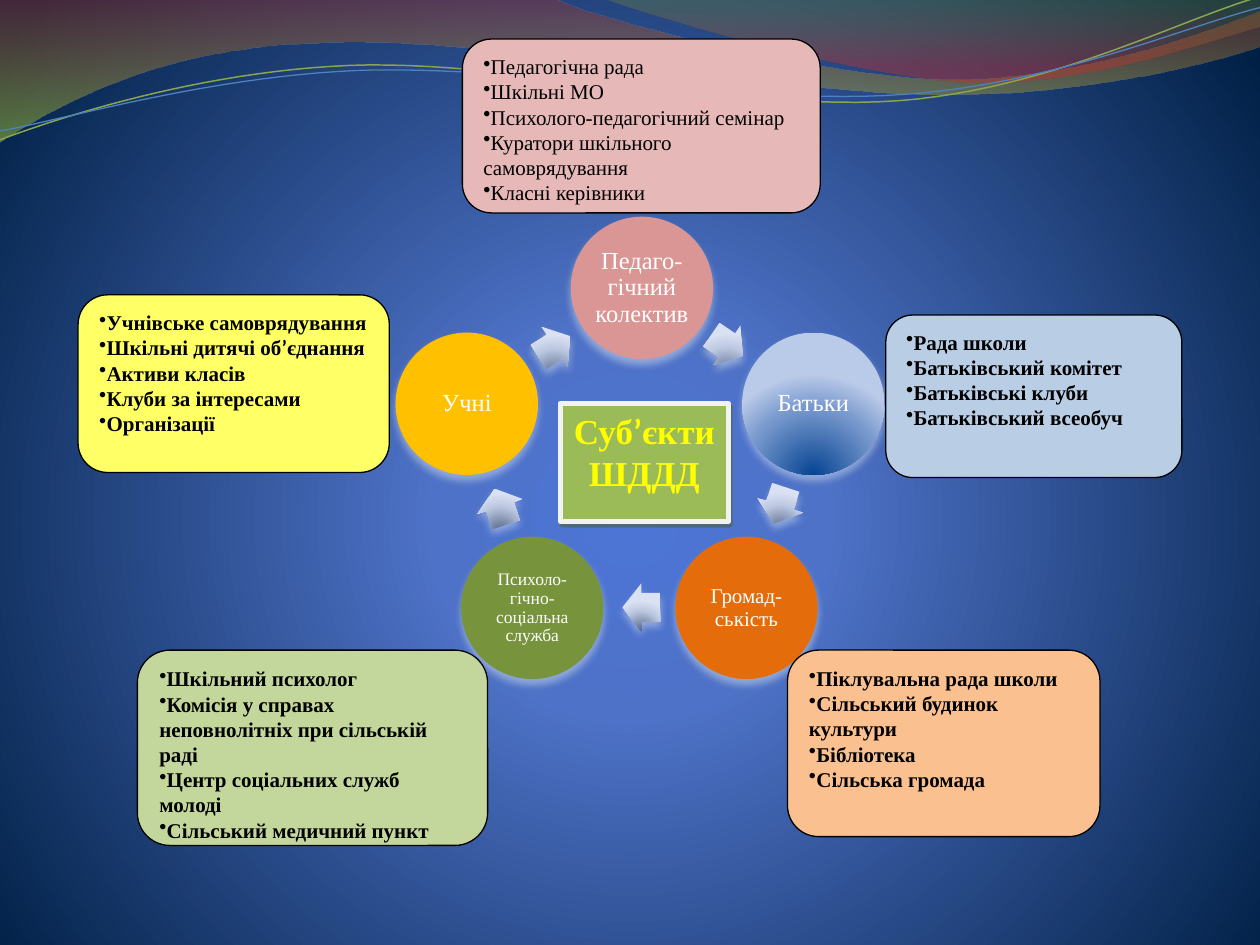
from pptx import Presentation
from pptx.dml.color import RGBColor
from pptx.enum.shapes import MSO_SHAPE
from pptx.enum.text import MSO_ANCHOR, PP_ALIGN
from pptx.oxml import parse_xml
from pptx.oxml.ns import nsdecls, qn
from pptx.util import Inches, Pt

FONT = "Times New Roman"
CIRCLE_SIZE = 1.13
ARROW_SIZE = (0.3, 0.38)

# Gradients: stops (position, colour, opacity), then angle or focus rectangle
BACKGROUND = ([(0, "4D75D6", 100), (25, "4E72C7", 100), (100, "001F44", 100)], (10, 110, 10, 100))
ARROW_FILL = ([(0, "536688", 100), (68, "BECAE3", 100), (100, "D9E1F2", 100)], (50, 130, 50, -30))
PARENTS_FILL = ([(0, "064493", 100), (68, "799ACE", 100), (100, "BACAE9", 100)], (50, 130, 50, -30))
SOFT_SHADOW = ("DCE6F2", 48, 4.5, 3, 90)
PANEL_SHADOW = ("4E6128", 50, 0, 2.2, 63)

# Waves: first point, then lines (one point) or curves (three points)
BANDS = [
    (([(0, "973330", 45), (100, "95C238", 55)], 90), (0, 0), [
        [(4.4, -0.01)],
        [(4.76, 0.17), (6.64, 0.63), (7.58, 0.63)],
        [(8.53, 0.63), (9.58, 0.26), (10, 0.09)],
        [(10.01, 0.36)],
        [(9.83, 0.44), (8.7, 0.76), (7.46, 0.75)],
        [(6.22, 0.75), (3.82, 0.28), (2.57, 0.34)],
        [(1.29, 0.36), (0.46, 0.83), (-0.01, 1.13)],
    ]),
    (([(0, "769537", 30), (80, "BE3330", 45)], 90), (4.79, -0.01), [
        [(5.09, 0.11), (6.82, 0.62), (7.69, 0.65)],
        [(8.56, 0.69), (9.61, 0.32), (10, 0.21)],
        [(10, 0)],
    ]),
]
STRANDS = [
    ("89A54F", 0.85, (0, 1.11), [
        [(0.48, 0.93), (1.58, 0.57), (2.77, 0.52)],
        [(3.95, 0.47), (5.93, 0.89), (7.13, 0.8)],
        [(8.33, 0.71), (9.38, 0.15), (9.98, -0.02)],
    ]),
    ("4F81BD", 0.75, (0, 1.04), [
        [(0.47, 0.96), (1.64, 0.61), (2.83, 0.56)],
        [(4.03, 0.51), (5.97, 0.84), (7.17, 0.75)],
        [(8.36, 0.67), (9.41, 0.21), (10, 0.06)],
    ]),
]

# Cycle: circle (label, left, top, size, fill) and the arrow after it (kind, left, top, rotation)
RIGHT, LEFT = MSO_SHAPE.RIGHT_ARROW, MSO_SHAPE.LEFT_ARROW
CYCLE = [
    (("Педаго-гічний колектив", 4.53, 1.72, 14, "D99694"), (RIGHT, 5.62, 2.55, 34.3)),
    (("Батьки", 5.89, 2.64, 14, PARENTS_FILL), (LEFT, 6.04, 3.82, 288)),
    (("Громад-ськість", 5.36, 4.26, 12, "E46C0A"), (LEFT, 4.94, 4.63, 0)),
    (("Психоло-гічно-соціальна служба", 3.66, 4.26, 10, "77933C"), (LEFT, 3.82, 3.83, 72)),
    (("Учні", 3.14, 2.64, 14, "FFC000"), (RIGHT, 4.25, 2.56, 326.6)),
]

CENTRE = ["Суб’єкти", "ШДДД"]

# Lists: position, fill, bold, items
LISTS = [
    ((3.67, 0.31, 2.84, 1.38), "E6B9B8", False, [
        "Педагогічна рада", "Шкільні МО", "Психолого-педагогічний семінар",
        "Куратори шкільного самоврядування", "Класні керівники"]),
    ((0.62, 2.34, 2.47, 1.41), "FFFF66", True, [
        "Учнівське самоврядування", "Шкільні дитячі об’єднання", "Активи класів",
        "Клуби за інтересами", "Організації"]),
    ((7.03, 2.5, 2.35, 1.29), "B9CDE5", True, [
        "Рада школи", "Батьківський комітет", "Батьківські клуби", "Батьківський всеобуч"]),
    ((1.09, 5.16, 2.78, 1.55), "C3D69B", True, [
        "Шкільний психолог", "Комісія у справах неповнолітніх при сільській раді",
        "Центр соціальних служб молоді", "Сільський медичний пункт"]),
    ((6.25, 5.16, 2.48, 1.48), "FAC090", True, [
        "Піклувальна рада школи", "Сільський будинок культури", "Бібліотека", "Сільська громада"]),
]


def color(value):
    return RGBColor.from_string(value)


def color_xml(value, opacity):
    return f'<a:srgbClr val="{value}"><a:alpha val="{opacity * 1000}"/></a:srgbClr>'


def set_gradient(fill, parent, gradient):
    stops, direction = gradient
    stop_xml = "".join(f'<a:gs pos="{position * 1000}">{color_xml(value, opacity)}</a:gs>'
                       for position, value, opacity in stops)
    if isinstance(direction, tuple):
        sides = " ".join(f'{side}="{amount * 1000}"' for side, amount in zip("ltrb", direction))
        shade = f'<a:path path="circle"><a:fillToRect {sides}/></a:path>'
    else:
        shade = f'<a:lin ang="{direction * 60000}" scaled="1"/>'
    fill.solid()
    solid = parent.find(qn("a:solidFill"))
    parent.replace(solid, parse_xml(
        f'<a:gradFill {nsdecls("a")} rotWithShape="1"><a:gsLst>{stop_xml}</a:gsLst>{shade}</a:gradFill>'))


def style_shape(shape, fill=None, line=None, shadow=None):
    """Set fill (hex or gradient), line (hex, width) and shadow."""
    shape.shadow.inherit = False
    if fill is None:
        shape.fill.background()
    elif isinstance(fill, str):
        shape.fill.solid()
        shape.fill.fore_color.rgb = color(fill)
    else:
        set_gradient(shape.fill, shape._element.spPr, fill)
    if line:
        shape.line.color.rgb = color(line[0])
        shape.line.width = Pt(line[1])
    else:
        shape.line.fill.background()
    if shadow:
        value, opacity, blur, distance, angle = shadow
        shape._element.spPr.find(qn("a:effectLst")).append(parse_xml(
            f'<a:outerShdw {nsdecls("a")} blurRad="{Pt(blur)}" dist="{Pt(distance)}" '
            f'dir="{angle * 60000}" rotWithShape="0">{color_xml(value, opacity)}</a:outerShdw>'))


def add_shape(slide, kind, position, **style):
    shape = slide.shapes.add_shape(kind, *map(Inches, position))
    style_shape(shape, **style)
    return shape


def add_wave(slide, start, segments, close, **style):
    points = [start]
    for segment in segments:
        if len(segment) == 1:
            points += segment
            continue
        curve = [points[-1], *segment]
        for step in range(1, 25):
            t = step / 24
            weights = ((1 - t) ** 3, 3 * t * (1 - t) ** 2, 3 * t * t * (1 - t), t ** 3)
            points.append(tuple(sum(w * p[axis] for w, p in zip(weights, curve)) for axis in (0, 1)))
    points = [(Inches(x), Inches(y)) for x, y in points]
    builder = slide.shapes.build_freeform(*points[0])
    builder.add_line_segments(points[1:], close=close)
    style_shape(builder.convert_to_shape(), **style)


def set_text(shape, lines, size, text_color, bold=False, align=PP_ALIGN.LEFT,
             anchor=MSO_ANCHOR.TOP, bullet=False, spacing=None):
    frame = shape.text_frame
    frame.word_wrap = True
    frame.vertical_anchor = anchor
    for index, line in enumerate(lines):
        paragraph = frame.add_paragraph() if index else frame.paragraphs[0]
        paragraph.alignment = align
        if spacing:
            paragraph.line_spacing = spacing
        if bullet:
            properties = paragraph._p.get_or_add_pPr()
            properties.set("marL", "0")
            properties.set("indent", "0")
            properties.append(parse_xml(f'<a:buChar {nsdecls("a")} char="•"/>'))
        # The apostrophe has its own font
        for part in line.replace("’", "|’|").split("|"):
            run = paragraph.add_run()
            run.text = part
            run.font.name = "Calibri" if part == "’" else FONT
            run.font.size = Pt(size)
            run.font.bold = bold
            run.font.color.rgb = color(text_color)


presentation = Presentation()
presentation.slide_width, presentation.slide_height = Inches(10), Inches(7.5)
slide = presentation.slides.add_slide(presentation.slide_layouts[6])

# Background and waves
background_fill = slide.background.fill
background_fill.solid()
set_gradient(background_fill, slide._element.find(".//" + qn("p:bgPr")), BACKGROUND)
for fill, start, segments in BANDS:
    add_wave(slide, start, segments, True, fill=fill)
for line_color, width, start, segments in STRANDS:
    add_wave(slide, start, segments, False, line=(line_color, width))

# Cycle of circles and arrows
for (label, left, top, size, fill), (kind, arrow_left, arrow_top, rotation) in CYCLE:
    circle = add_shape(slide, MSO_SHAPE.OVAL, (left, top, CIRCLE_SIZE, CIRCLE_SIZE),
                       fill=fill, shadow=SOFT_SHADOW)
    frame = circle.text_frame
    frame.margin_left = frame.margin_right = frame.margin_top = frame.margin_bottom = Inches(0.02)
    set_text(circle, [label], size, "FFFFFF", align=PP_ALIGN.CENTER,
             anchor=MSO_ANCHOR.MIDDLE, spacing=0.9)
    arrow = add_shape(slide, kind, (arrow_left, arrow_top, *ARROW_SIZE),
                      fill=ARROW_FILL, shadow=SOFT_SHADOW)
    arrow.adjustments[0], arrow.adjustments[1] = 0.6, 0.5
    arrow.rotation = rotation

# Centre panel
panel = add_shape(slide, MSO_SHAPE.RECTANGLE, (4.45, 3.2, 1.33, 0.94),
                  fill="9BBB59", line=("F2F2F2", 3), shadow=PANEL_SHADOW)
set_text(panel, CENTRE, 20, "FFFF00", bold=True, align=PP_ALIGN.CENTER)

# Lists around the cycle
for position, fill, bold, items in LISTS:
    box = add_shape(slide, MSO_SHAPE.ROUNDED_RECTANGLE, position, fill=fill, line=("000000", 0.75))
    set_text(box, items, 12, "000000", bold=bold, bullet=True)

presentation.save("out.pptx")
